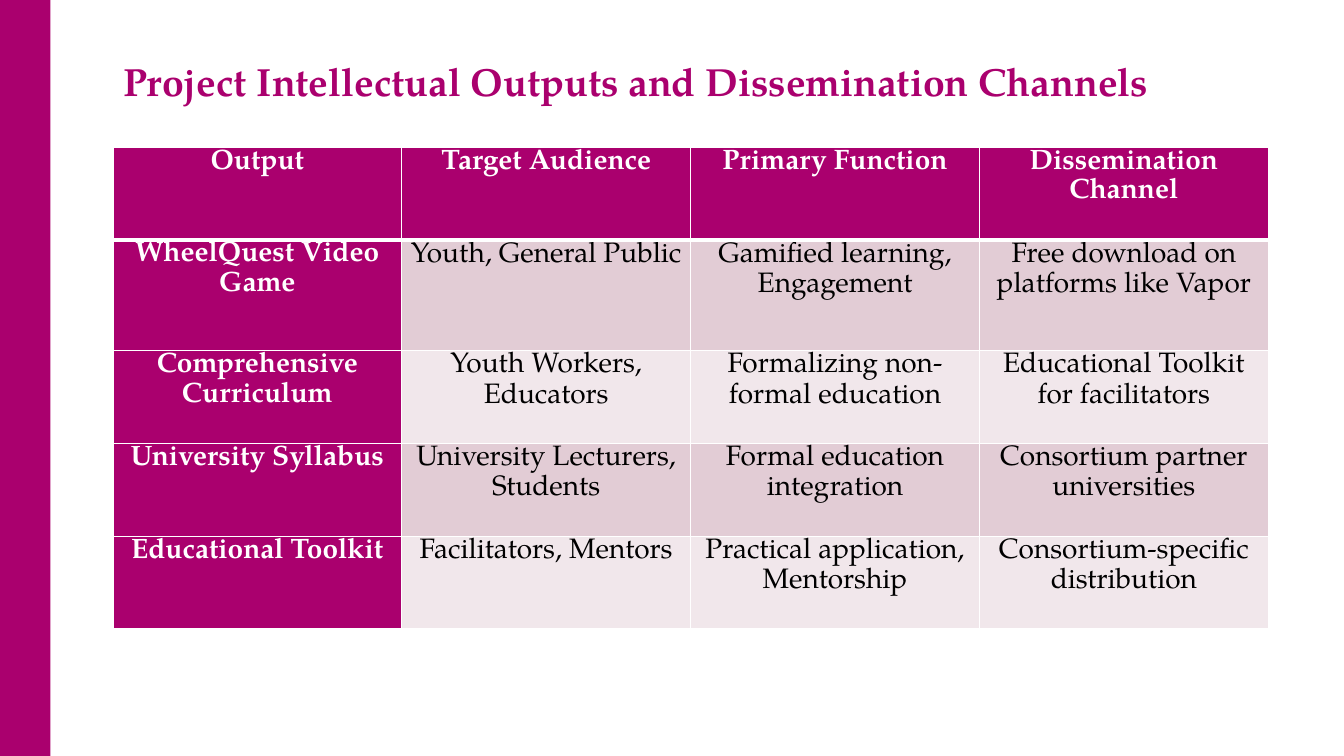
from lxml import etree
from pptx import Presentation
from pptx.dml.color import RGBColor
from pptx.enum.shapes import MSO_SHAPE as Shape
from pptx.enum.text import MSO_ANCHOR as Anchor, MSO_AUTO_SIZE as Fit, PP_ALIGN as Align
from pptx.oxml.ns import qn
from pptx.util import Inches, Pt

PLUM = RGBColor(0xAA, 0x00, 0x6E)
ROSE = RGBColor(0xE2, 0xCC, 0xD5)
BLUSH = RGBColor(0xF1, 0xE7, 0xEB)
WHITE = RGBColor(0xFF, 0xFF, 0xFF)
BLACK = RGBColor(0x00, 0x00, 0x00)
FACE = "TeX Gyre Pagella"


def style(font, size, color, bold):
    for key, value in {"name": FACE, "size": Pt(size), "bold": bold}.items():
        setattr(font, key, value)
    font.color.rgb = color


def border(cell, side, width):
    line = etree.SubElement(cell._tc.get_or_add_tcPr(), qn("a:ln" + side), w=str(Pt(width)))
    fill = etree.SubElement(line, qn("a:solidFill"))
    etree.SubElement(fill, qn("a:srgbClr"), val=str(WHITE))


deck = Presentation()
deck.slide_width, deck.slide_height = Inches(13.33), Inches(7.5)
slide = deck.slides.add_slide(deck.slide_layouts[5])

bar = slide.shapes.add_shape(Shape.RECTANGLE, 0, 0, Inches(0.5), Inches(7.5))
bar.shadow.inherit = False
bar.fill.solid()
bar.fill.fore_color.rgb = PLUM
bar.line.fill.background()

title = slide.shapes.title
place = {"left": 0.97, "top": 0.46, "width": 11.96, "height": 0.68}
for key, value in place.items():
    setattr(title, key, Inches(value))
frame = title.text_frame
frame.text = "Project Intellectual Outputs and Dissemination Channels"
layout = {
    "margin_left": Inches(0.25),
    "margin_top": Inches(0.11),
    "margin_right": 0,
    "margin_bottom": 0,
    "vertical_anchor": Anchor.TOP,
    "auto_size": Fit.NONE,
    "word_wrap": True,
}
for key, value in layout.items():
    setattr(frame, key, value)
head = frame.paragraphs[0]
head.alignment = Align.LEFT
style(head.font, 28, PLUM, True)

rows = [
    ("Output", "Target Audience", "Primary Function", "Dissemination Channel"),
    ("WheelQuest Video Game", "Youth, General Public", "Gamified learning, Engagement",
     "Free download on platforms like Vapor"),
    ("Comprehensive Curriculum", "Youth Workers, Educators",
     "Formalizing non-formal education", "Educational Toolkit for facilitators"),
    ("University Syllabus", "University Lecturers, Students",
     "Formal education integration", "Consortium partner universities"),
    ("Educational Toolkit", "Facilitators, Mentors",
     "Practical application, Mentorship", "Consortium-specific distribution"),
]
heights = [0.92, 1.1, 0.92, 0.92, 0.92]
table = slide.shapes.add_table(
    len(rows), 4, Inches(1.12), Inches(1.46), Inches(11.46), Inches(sum(heights))
).table
for column in table.columns:
    column.width = Inches(11.46 / 4)

inset = {
    "margin_left": Inches(0.07),
    "margin_right": Inches(0.07),
    "margin_top": 0,
    "margin_bottom": 0,
    "vertical_anchor": Anchor.TOP,
}
for r, texts in enumerate(rows):
    table.rows[r].height = Inches(heights[r])
    for c, text in enumerate(texts):
        cell = table.cell(r, c)
        label = r == 0 or c == 0
        for key, value in inset.items():
            setattr(cell, key, value)
        widths = {"L": 1, "R": 1, "T": 3 if r == 1 else 1, "B": 3 if r == 0 else 1}
        for side, width in widths.items():
            border(cell, side, width)
        cell.fill.solid()
        cell.fill.fore_color.rgb = PLUM if label else ROSE if r % 2 else BLUSH
        cell.text = text
        para = cell.text_frame.paragraphs[0]
        para.alignment = Align.CENTER
        para.line_spacing = 1.07
        style(para.font, 20, WHITE if label else BLACK, label)

deck.save("out.pptx")
